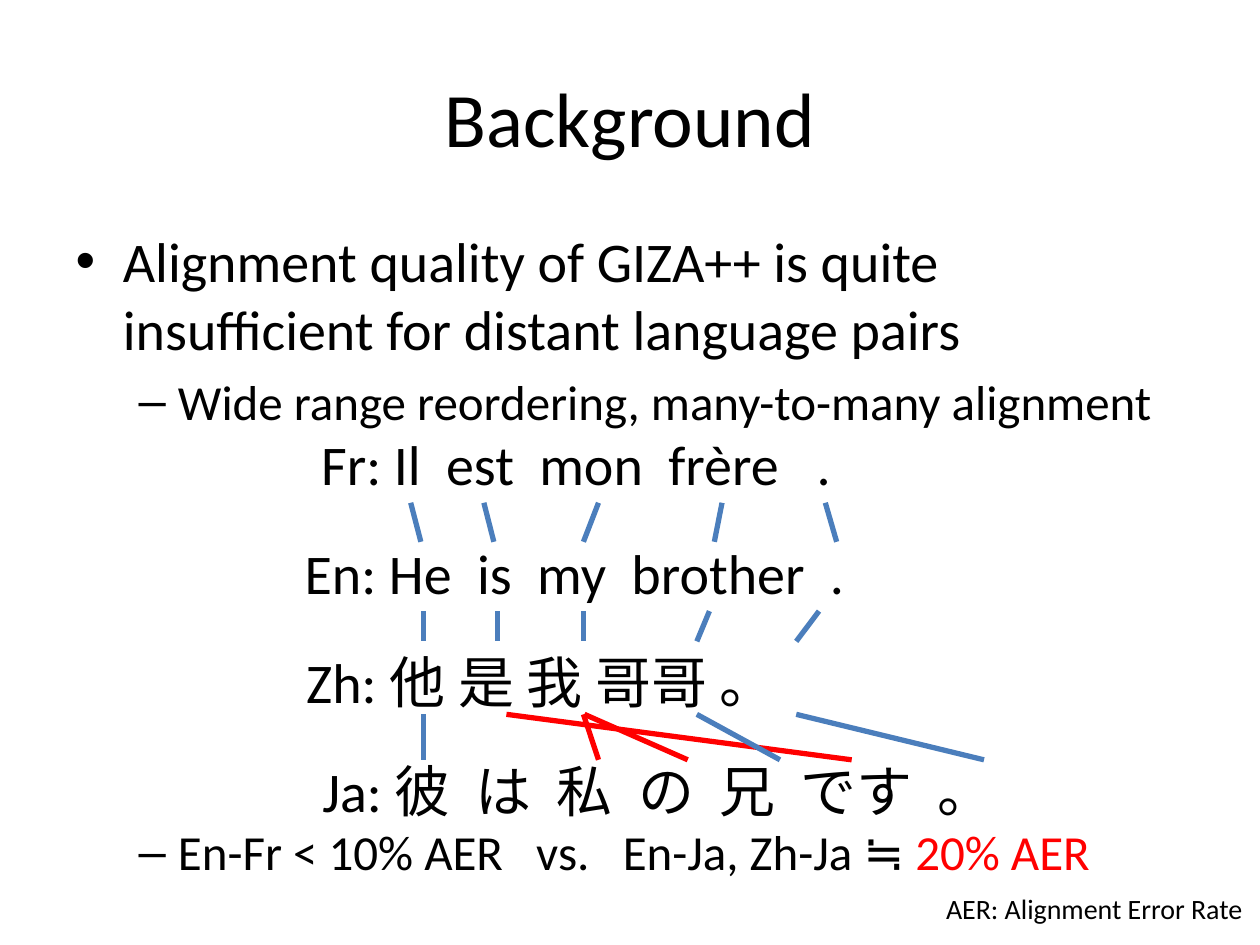
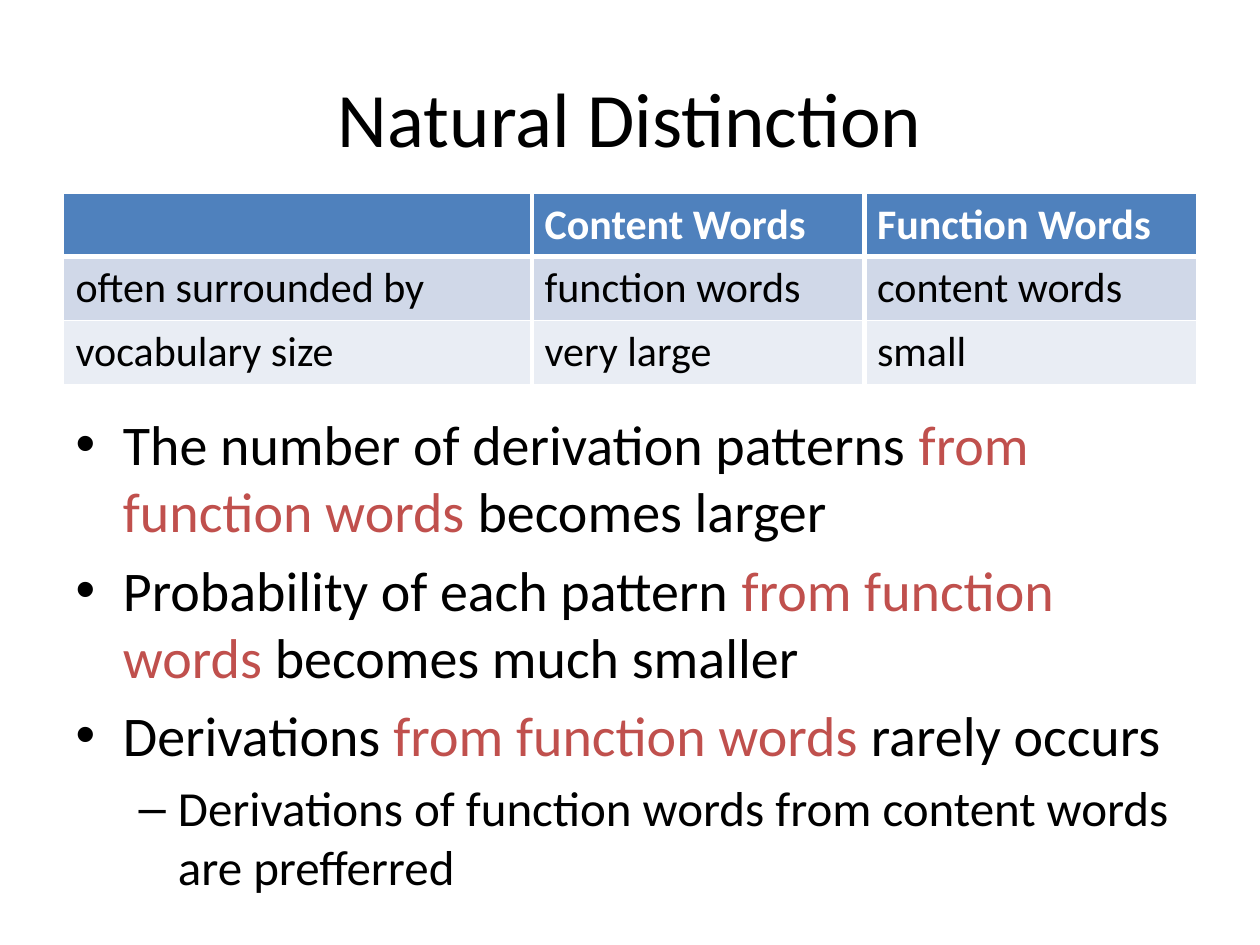
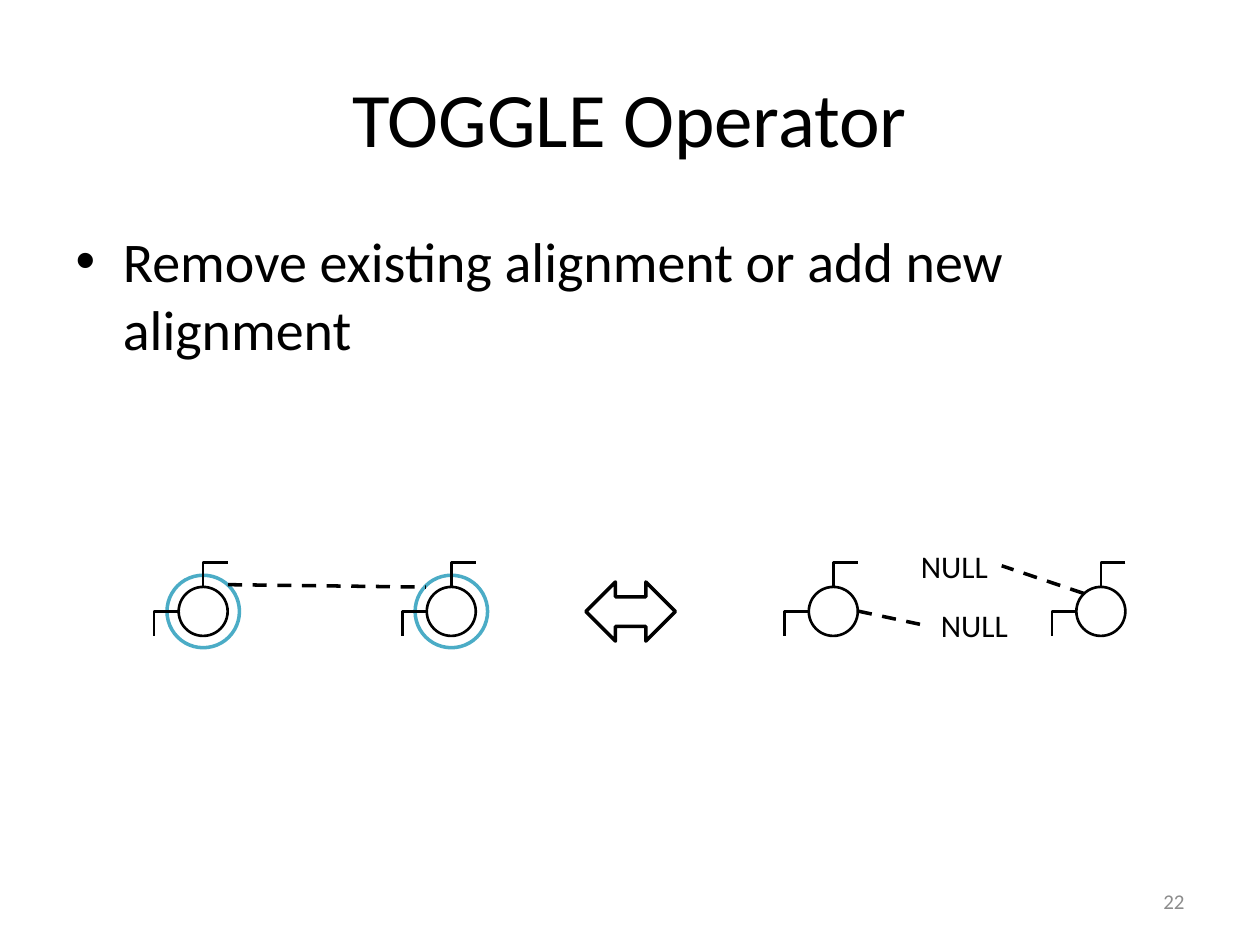
import pptx
import pptx.util
import pptx.dml.color
import pptx.enum.dml
import pptx.enum.shapes
import pptx.enum.text
import pptx.oxml.ns
from lxml import etree

Pt = pptx.util.Pt
qn = pptx.oxml.ns.qn
SHAPE = pptx.enum.shapes.MSO_SHAPE
LINE = pptx.enum.shapes.MSO_CONNECTOR
ALIGN = pptx.enum.text.PP_ALIGN
ANCHOR = pptx.enum.text.MSO_ANCHOR

FONT = "Calibri"
COLORS = {
    "black": "000000", "white": "FFFFFF", "grey": "8C8C8C",
    "blue": "4B7EBC", "red": "FF0000", "brick": "C0504D", "aqua": "4BACC6",
    "header": "4F81BD", "band1": "D0D8E8", "band2": "E9EDF4",
}
TITLE_BOX = (36, 21.6, 648, 90)
LEVEL_SIZES = (32, 28)

# Bullets: (level, space before or None, runs of (text, colour))
BACKGROUND = [
    (0, None, [("Alignment quality of GIZA++ is quite insufficient for distant "
                "language pairs", "black")]),
    (1, None, [("Wide range reordering, many-to-many alignment", "black")]),
    (1, 224, [("En-Fr < 10% AER   vs.   En-Ja, Zh-Ja ≒ ", "black"),
              ("20% AER", "red")]),
]
FROM_FUNCTION = ("from function words", "brick")
DISTINCTION = [
    (0, None, [("The number of derivation patterns ", "black"), FROM_FUNCTION,
               (" becomes larger", "black")]),
    (0, None, [("Probability of each pattern ", "black"), FROM_FUNCTION,
               (" becomes much smaller", "black")]),
    (0, None, [("Derivations ", "black"), FROM_FUNCTION,
               (" rarely occurs", "black")]),
    (1, None, [("Derivations of function words from content words are "
                "prefferred", "black")]),
]
TOGGLE = [(0, None, [("Remove existing alignment or add new alignment",
                      "black")])]

# Sentences: (text, left, width), one row each
SENTENCES = [
    ("Fr: Il  est  mon  frère   .", 176.4, 310.3),
    ("En: He  is  my  brother  .", 167, 326.9),
    ("Zh: 他 是 我 哥哥 。", 167.8, 310.3),
    ("Ja: 彼  は  私  の  兄  です  。", 177.1, 415.4),
]
SENTENCE_TOP, SENTENCE_STEP, SENTENCE_HEIGHT = 241.8, 62.4, 46
# Word links between rows: (top, bottom, [(x above, x below, colour)])
WORD_LINKS = [
    (287.3, 309.6, [(234.7, 240.5, "blue"), (276.5, 282.2, "blue"),
                    (342, 333.4, "blue"), (412.6, 408.2, "blue"),
                    (471.6, 478.1, "blue")]),
    (349.2, 366.5, [(242, 242, "blue"), (284.4, 284.4, "blue"),
                    (333.4, 333.4, "blue"), (405.4, 398.2, "blue"),
                    (468, 455, "blue")]),
    (408.2, 434.2, [(242, 242, "blue"), (289.4, 486.7, "red"),
                    (333.4, 342, "red"), (398.2, 445.7, "blue"),
                    (455, 562.3, "blue"), (334, 393, "red")]),
]

WORD_TABLE = [
    ("", "Content Words", "Function Words"),
    ("often surrounded by", "function words", "content words"),
    ("vocabulary size", "very large", "small"),
]
TABLE_COLUMNS = (268, 190, 190)
ROW_FILLS = ("header", "band1", "band2")

NODE_Y, NODE_RADIUS, HALO_RADIUS = 349.4, 14, 20.7
NODES = [(116.1, True), (257.9, True), (476.2, False), (629.1, False)]
DASHED_LINKS = [(130.3, 334.1, 243.4, 335.5), (490.3, 349.2, 530.6, 357.8),
                (619.2, 339.1, 572.4, 323.3)]
NULLS = [(530.6, 342.7), (519.1, 308.9)]


def rgb(name):
    return pptx.dml.color.RGBColor.from_string(COLORS[name])


def style_run(r, size, color="black", bold=False):
    r.font.size, r.font.name, r.font.bold = Pt(size), FONT, bold
    r.font.color.rgb = rgb(color)


def place(shape, left, top, width, height):
    shape.left, shape.top = Pt(left), Pt(top)
    shape.width, shape.height = Pt(width), Pt(height)


def add_slide(prs, title, bullets, body_top, body_height):
    s = prs.slides.add_slide(prs.slide_layouts[1])
    place(s.shapes.title, *TITLE_BOX)
    s.shapes.title.text_frame.text = title
    style_run(s.shapes.title.text_frame.paragraphs[0].runs[0], 44)
    body = s.placeholders[1]
    place(body, 36, body_top, 648, body_height)
    tf = body.text_frame
    tf.auto_size = pptx.enum.text.MSO_AUTO_SIZE.NONE
    for i, (level, space, runs) in enumerate(bullets):
        p = tf.add_paragraph() if i else tf.paragraphs[0]
        p.level = level
        if space is not None:
            p.space_before = Pt(space)
        for text, color in runs:
            r = p.add_run()
            r.text = text
            style_run(r, LEVEL_SIZES[level], color)
    return s


def add_label(s, text, box, size, color="black", align=ALIGN.LEFT,
              anchor=ANCHOR.TOP):
    sp = s.shapes.add_textbox(*map(Pt, box))
    tf = sp.text_frame
    tf.text, tf.word_wrap, tf.vertical_anchor = text, False, anchor
    tf.paragraphs[0].alignment = align
    style_run(tf.paragraphs[0].runs[0], size, color)


def add_line(s, x1, y1, x2, y2, color, width, kind=LINE.STRAIGHT):
    line = s.shapes.add_connector(kind, *map(Pt, (x1, y1, x2, y2)))
    line.line.color.rgb, line.line.width = rgb(color), Pt(width)
    etree.SubElement(line._element.spPr, qn("a:effectLst"))
    return line


def add_outline(s, kind, box, color, width):
    sp = s.shapes.add_shape(kind, *map(Pt, box))
    sp.shadow.inherit = False
    sp.fill.background()
    sp.line.color.rgb, sp.line.width = rgb(color), Pt(width)


def add_circle(s, x, y, radius, color, width):
    box = (x - radius, y - radius, 2 * radius, 2 * radius)
    add_outline(s, SHAPE.OVAL, box, color, width)


def add_hook(s, right, top):
    """Draw a corner that runs left from its right end, then down."""
    hook = add_line(s, right, top, right - NODE_RADIUS, top + NODE_RADIUS,
                    "black", 1.5, LINE.ELBOW)
    hook._element.spPr.find(qn("a:prstGeom")).set("prst", "bentConnector2")


def set_borders(cell, widths):
    tc_pr = cell._tc.get_or_add_tcPr()
    for i, (side, width) in enumerate(widths.items()):
        ln = etree.Element(qn("a:ln" + side), w=str(Pt(width)))
        fill = etree.SubElement(ln, qn("a:solidFill"))
        etree.SubElement(fill, qn("a:srgbClr"), val=COLORS["white"])
        tc_pr.insert(i, ln)


def add_word_table(s):
    frame = s.shapes.add_table(len(WORD_TABLE), len(TABLE_COLUMNS),
                               Pt(36), Pt(110.2), Pt(648), Pt(108))
    table = frame.table
    for column, width in zip(table.columns, TABLE_COLUMNS):
        column.width = Pt(width)
    for i, row in enumerate(WORD_TABLE):
        for j, text in enumerate(row):
            cell = table.cell(i, j)
            cell.fill.solid()
            cell.fill.fore_color.rgb = rgb(ROW_FILLS[i])
            set_borders(cell, {"L": 3 if j else 1,
                               "R": 3 if j < len(row) - 1 else 1,
                               "T": 3 if i == 1 else 1,
                               "B": 3 if i == 0 else 1})
            p = cell.text_frame.paragraphs[0]
            p.text = text
            p.font.size = Pt(24)
            for r in p.runs:
                style_run(r, 24, "black" if i else "white", i == 0)


def build_background(prs):
    s = add_slide(prs, "Background", BACKGROUND, 126, 414)
    for i, (text, left, width) in enumerate(SENTENCES):
        top = SENTENCE_TOP + i * SENTENCE_STEP
        add_label(s, text, (left, top, width, SENTENCE_HEIGHT), 32)
    for top, bottom, links in WORD_LINKS:
        for above, below, color in links:
            add_line(s, above, top, below, bottom, color, 3)
    add_label(s, "AER: Alignment Error Rate", (533.5, 506.2, 186.5, 26.6), 16)


def build_distinction(prs):
    s = add_slide(prs, "Natural Distinction", DISTINCTION, 230.4, 309.6)
    add_word_table(s)


def build_toggle(prs):
    s = add_slide(prs, "TOGGLE Operator", TOGGLE, 126, 356.4)
    for x, has_halo in NODES:
        if has_halo:
            add_circle(s, x, NODE_Y, HALO_RADIUS, "aqua", 2)
        add_circle(s, x, NODE_Y, NODE_RADIUS, "black", 1.5)
        add_hook(s, x - NODE_RADIUS, NODE_Y)
        add_hook(s, x + NODE_RADIUS, NODE_Y - 2 * NODE_RADIUS)
    for ends in DASHED_LINKS:
        link = add_line(s, *ends, "black", 2)
        link.line.dash_style = pptx.enum.dml.MSO_LINE.DASH
    add_outline(s, SHAPE.LEFT_RIGHT_ARROW, (334.8, 332.6, 51.1, 33.8),
                "black", 2)
    for left, top in NULLS:
        add_label(s, "NULL", (left, top, 53.3, 28.8), 18)
    add_label(s, "22", (516, 500.4, 168, 28.8), 12, "grey", ALIGN.RIGHT,
              ANCHOR.MIDDLE)


def main():
    prs = pptx.Presentation()
    prs.slide_width, prs.slide_height = Pt(720), Pt(540)
    build_background(prs)
    build_distinction(prs)
    build_toggle(prs)
    prs.save("out.pptx")


if __name__ == "__main__":
    main()
